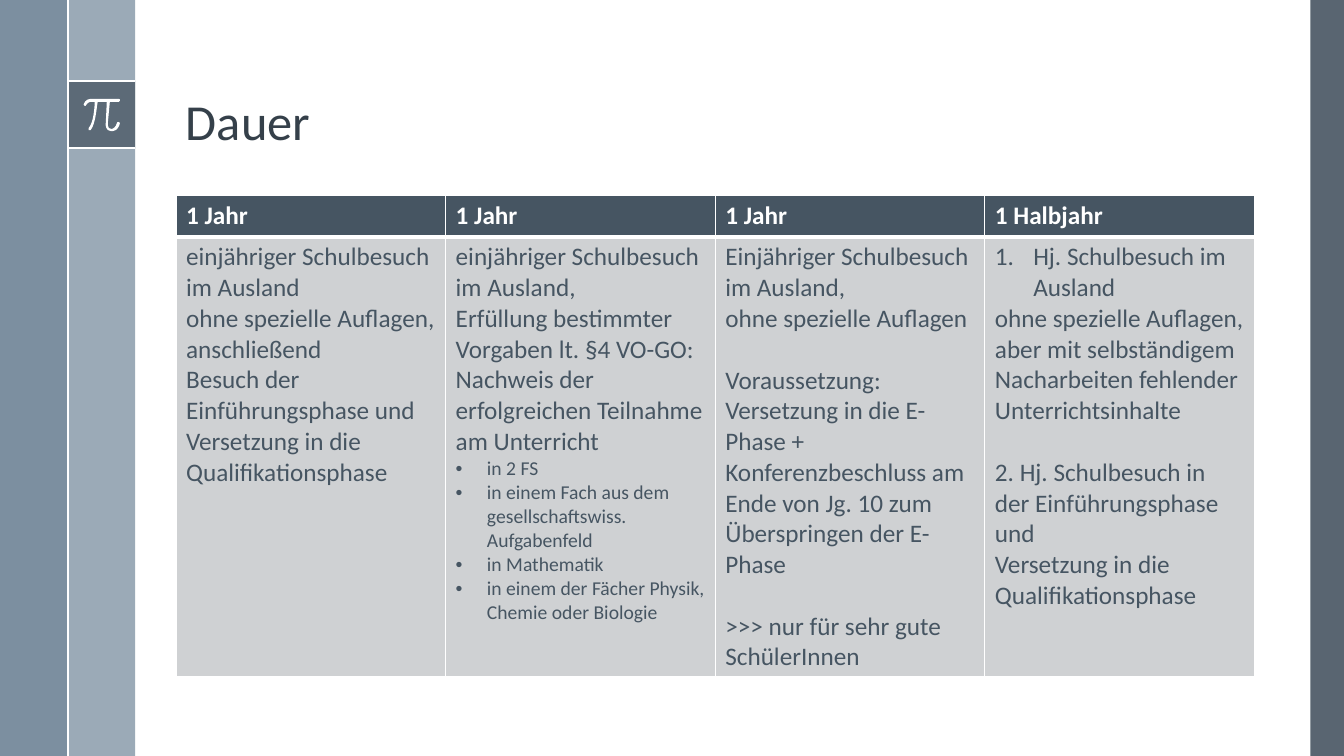
from dataclasses import dataclass

from lxml import etree
from pptx import Presentation
from pptx.dml.color import RGBColor
from pptx.enum.shapes import MSO_CONNECTOR, MSO_SHAPE
from pptx.enum.text import MSO_ANCHOR
from pptx.oxml.ns import qn
from pptx.util import Inches, Pt

RECTANGLE = MSO_SHAPE.RECTANGLE
STRAIGHT = MSO_CONNECTOR.STRAIGHT
BOTTOM = MSO_ANCHOR.BOTTOM

# The slide is 20 grid columns wide; rows have the same size as columns.
UNIT = Inches(13.33) / 20
COLUMNS, ROWS = 20, 11.25
BAR = 1.01
CONTENT_LEFT, CONTENT_WIDTH = 2.62, 16.05
FONT = "Calibri"
COLORS = {
    "dark": "475562", "light": "9BAAB7", "blue": "6A8093", "white": "FFFFFF",
    "title": "35404A", "text": "465562", "body": "CFD1D3",
}


@dataclass
class Panel:
    left: float
    top: float
    width: float
    height: float
    color: str
    opacity: int = 100


@dataclass
class Rule:
    start: tuple[float, float]
    end: tuple[float, float]


@dataclass
class Item:
    text: str
    size: int = 18
    marker: str = ""
    indent: float = 0
    before: int = 0


@dataclass
class Column:
    heading: str
    items: list[Item]


def point(text: str) -> Item:
    return Item(text, 14, "•", 0.31)


def after_gap(text: str) -> Item:
    return Item(text, before=22)


PANELS = [
    Panel(19.5, 0, 0.5, ROWS, "dark", 90),
    Panel(BAR, 0, 1, ROWS, "light"),
    Panel(0, 0, BAR, ROWS, "blue", 88),
    Panel(BAR, 1.21, 1, 1, "dark", 75),
]
RULES = [
    Rule((BAR, 1.21), (BAR + 1, 1.21)),
    Rule((BAR, 2.2), (BAR + 1, 2.2)),
]
SPINE = Rule((BAR, 0), (BAR, ROWS))
# Hundredths of an inch: pairs are straight segments, sixes are Bézier curves.
PI_START = (118, 98)
PI_SEGMENTS = [
    (90, 98), (85, 98, 83, 103, 83, 104), (83, 104, 83, 105, 84, 105),
    (85, 105), (85, 105, 87, 101, 90, 101), (94, 101),
    (94, 105, 93, 122, 88, 127), (87, 128, 87, 128, 88, 129), (89, 129),
    (90, 129), (95, 123, 96, 105, 97, 101), (106, 101), (105, 122),
    (105, 122, 104, 126, 107, 129), (108, 130, 109, 130, 110, 130),
    (111, 130, 111, 130, 112, 130), (117, 130, 119, 123, 119, 122),
    (119, 122, 118, 121, 118, 121), (117, 121, 116, 121, 116, 122),
    (116, 122, 115, 127, 111, 128), (110, 128, 109, 128, 108, 127),
    (107, 126, 107, 123, 107, 122), (109, 101), (118, 101),
    (119, 101, 119, 100, 119, 100), (119, 99, 119, 98, 118, 98),
]
DURATIONS = [
    Column("1 Jahr", [
        Item("einjähriger Schulbesuch im Ausland"),
        Item("ohne spezielle Auflagen, anschließend"),
        Item("Besuch der Einführungsphase und"),
        Item("Versetzung in die Qualifikationsphase"),
    ]),
    Column("1 Jahr", [
        Item("einjähriger Schulbesuch im Ausland,"),
        Item("Erfüllung bestimmter Vorgaben lt. §4 VO-GO: Nachweis der "
             "erfolgreichen Teilnahme am Unterricht"),
        point("in 2 FS"),
        point("in einem Fach aus dem gesellschaftswiss. Aufgabenfeld"),
        point("in Mathematik"),
        point("in einem der Fächer Physik, Chemie oder Biologie"),
    ]),
    Column("1 Jahr", [
        Item("Einjähriger Schulbesuch im Ausland,"),
        Item("ohne spezielle Auflagen"),
        after_gap("Voraussetzung: Versetzung in die E-Phase +"),
        Item("Konferenzbeschluss am Ende von Jg. 10 zum Überspringen der E-Phase"),
        after_gap(">>> nur für sehr gute SchülerInnen"),
    ]),
    Column("1 Halbjahr", [
        Item("Hj. Schulbesuch im Ausland", marker="1.", indent=0.38),
        Item("ohne spezielle Auflagen, aber mit selbständigem Nacharbeiten "
             "fehlender Unterrichtsinhalte"),
        after_gap("2. Hj. Schulbesuch in der Einführungsphase und"),
        Item("Versetzung in die Qualifikationsphase"),
    ]),
]


def grid(*values: float) -> list[int]:
    """Turn grid units into EMU."""
    return [round(value * UNIT) for value in values]


def rgb(name: str) -> RGBColor:
    return RGBColor.from_string(COLORS[name])


def fill_shape(shape, color: str, opacity: int = 100) -> None:
    shape.shadow.inherit = False
    shape.line.fill.background()
    shape.fill.solid()
    shape.fill.fore_color.rgb = rgb(color)
    if opacity < 100:
        color_element = shape._element.spPr.find(qn("a:solidFill"))[0]
        etree.SubElement(color_element, qn("a:alpha"), val=str(opacity * 1000))


def add_panel(slide, panel: Panel) -> None:
    box = grid(panel.left, panel.top, panel.width, panel.height)
    fill_shape(slide.shapes.add_shape(RECTANGLE, *box), panel.color, panel.opacity)


def add_rule(slide, rule: Rule) -> None:
    connector = slide.shapes.add_connector(STRAIGHT, *grid(*rule.start, *rule.end))
    connector.line.color.rgb = rgb("white")
    connector.line.width = Pt(1.5)
    etree.SubElement(connector._element.spPr, qn("a:effectLst"))


def add_pi(slide) -> None:
    """Draw the anchor points, then bend the curved segments."""
    anchors = [PI_START] + [segment[-2:] for segment in PI_SEGMENTS]
    left, top = (min(values) for values in zip(*anchors))
    builder = slide.shapes.build_freeform(*PI_START, scale=Inches(0.01))
    builder.add_line_segments(anchors[1:], close=True)
    shape = builder.convert_to_shape()
    fill_shape(shape, "white")
    lines = list(shape._element.iter(qn("a:lnTo")))
    for line, segment in zip(lines, PI_SEGMENTS):
        if len(segment) == 6:
            curve = etree.Element(qn("a:cubicBezTo"))
            for x, y in zip(segment[::2], segment[1::2]):
                etree.SubElement(curve, qn("a:pt"), x=str(x - left), y=str(y - top))
            line.getparent().replace(line, curve)


def format_runs(paragraph, size: int, color: str, bold: bool = False) -> None:
    for run in paragraph.runs:
        run.font.name, run.font.size, run.font.bold = FONT, Pt(size), bold
        run.font.color.rgb = rgb(color)
    etree.SubElement(paragraph._p, qn("a:endParaRPr"), sz=str(size * 100))


def add_title(slide, text: str) -> None:
    box = grid(CONTENT_LEFT, 0.3, CONTENT_WIDTH, 2.03)
    frame = slide.shapes.add_textbox(*box).text_frame
    frame.word_wrap, frame.vertical_anchor = True, BOTTOM
    frame.text = text
    frame.paragraphs[0].line_spacing = 0.9
    format_runs(frame.paragraphs[0], 36, "title")


def style_cell(cell, fill: str, bottom: int) -> None:
    properties = cell._tc.get_or_add_tcPr()
    for side, width in (("L", 1), ("R", 1), ("T", 1), ("B", bottom)):
        border = etree.SubElement(properties, qn(f"a:ln{side}"), w=str(Pt(width)))
        solid = etree.SubElement(border, qn("a:solidFill"))
        etree.SubElement(solid, qn("a:srgbClr"), val=COLORS["white"])
    cell.fill.solid()
    cell.fill.fore_color.rgb = rgb(fill)


def set_marker(paragraph, item: Item) -> None:
    properties = paragraph._p.get_or_add_pPr()
    properties.set("marL", str(Inches(item.indent)))
    properties.set("indent", str(-Inches(item.indent)))
    if item.marker == "1.":
        etree.SubElement(properties, qn("a:buAutoNum"), type="arabicPeriod")
    else:
        etree.SubElement(properties, qn("a:buFont"), typeface="Arial")
        etree.SubElement(properties, qn("a:buChar"), char=item.marker)


def add_durations(slide) -> None:
    box = grid(CONTENT_LEFT, 2.91, CONTENT_WIDTH, 7.15)
    table = slide.shapes.add_table(2, len(DURATIONS), *box).table
    table.rows[0].height, table.rows[1].height = Inches(0.41), Inches(4.36)
    for index, column in enumerate(DURATIONS):
        header, body = table.cell(0, index), table.cell(1, index)
        style_cell(header, "text", 3)
        style_cell(body, "body", 1)
        header.text_frame.text = column.heading
        format_runs(header.text_frame.paragraphs[0], 18, "white", True)
        body.text_frame.text = "\n".join(item.text for item in column.items)
        for paragraph, item in zip(body.text_frame.paragraphs, column.items):
            if item.marker:
                set_marker(paragraph, item)
            if item.before:
                paragraph.space_before = Pt(item.before)
            format_runs(paragraph, item.size, "text")


def main() -> None:
    presentation = Presentation()
    presentation.slide_width, presentation.slide_height = grid(COLUMNS, ROWS)
    slide = presentation.slides.add_slide(presentation.slide_layouts[6])
    for panel in PANELS:
        add_panel(slide, panel)
    for rule in RULES:
        add_rule(slide, rule)
    add_pi(slide)
    add_rule(slide, SPINE)
    add_title(slide, "Dauer")
    add_durations(slide)
    presentation.save("out.pptx")


if __name__ == "__main__":
    main()
